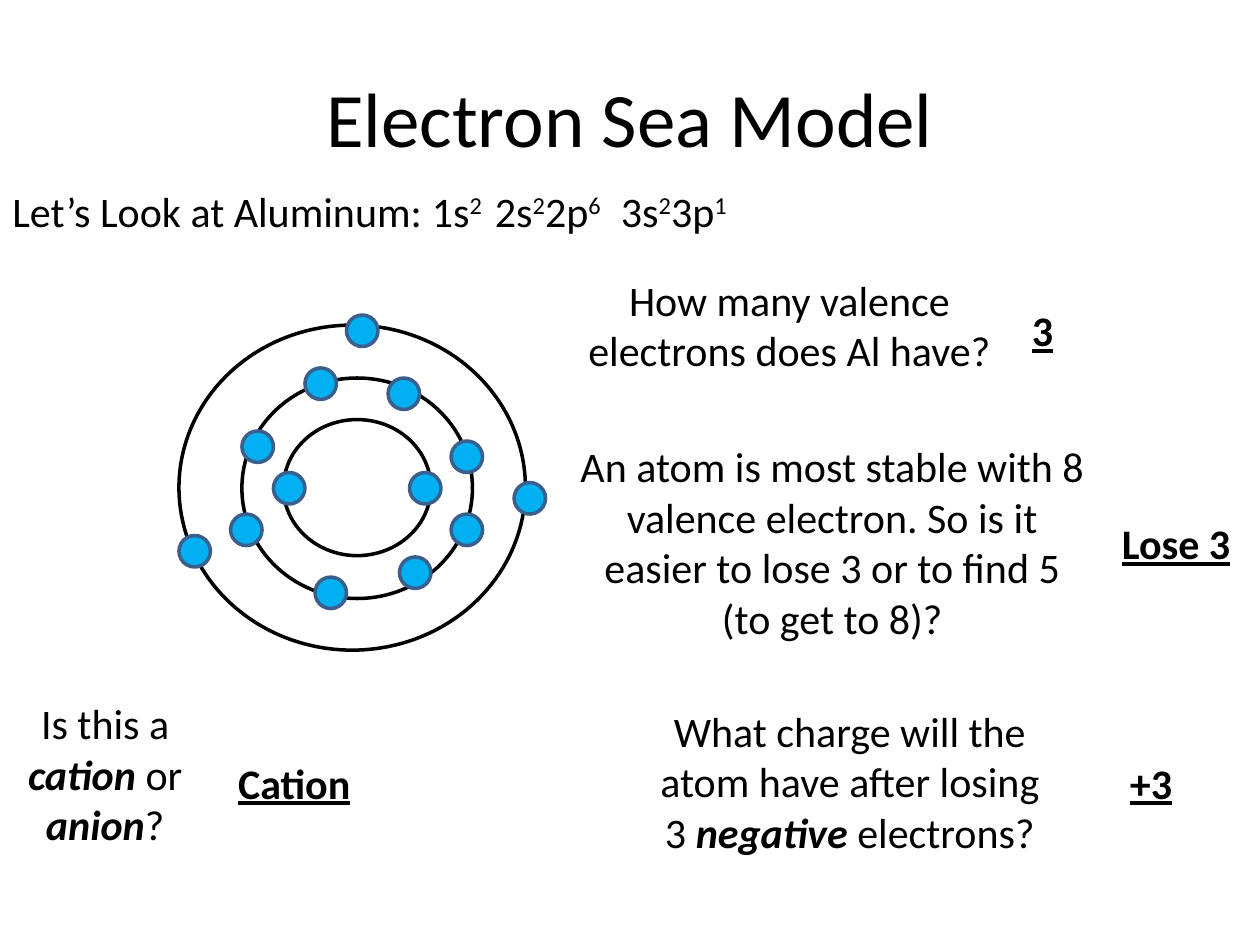
"""Build the Electron Sea Model slide about aluminum's valence electrons."""
from pptx import Presentation
from pptx.dml.color import RGBColor
from pptx.enum.shapes import MSO_SHAPE
from pptx.enum.text import MSO_ANCHOR, MSO_AUTO_SIZE, PP_ALIGN
from pptx.util import Inches, Pt

THEME = {
    "font": "Calibri",
    "text": RGBColor(0, 0, 0),
    "electron": RGBColor(0x00, 0xB0, 0xF0),
    "electron_line": RGBColor(0x3A, 0x5F, 0x8C),
    "title_size": Pt(44),
    "body_size": Pt(24),
    "line_width": Pt(2),
}
STYLES = {
    "plain": {},
    "super": {},
    "strong": {"bold": True, "italic": True},
    "answer": {"bold": True, "underline": True},
}
SUPERSCRIPT = "30000"

TITLE = "Electron Sea Model"
TITLE_BOX = (0.5, 0.3, 9, 1.25)
SHELLS = [(1.92, 3, 1.83, 1.75), (1.42, 2.58, 2.75, 2.58), (2.25, 3.33, 1.17, 1.08)]
ELECTRON_SIZE = 0.25
ELECTRONS = {
    "first shell": [(3.25, 3.75), (2.17, 3.75)],
    "second shell": [(3.08, 3), (3.17, 4.42), (3.58, 4.08), (2.42, 2.92),
                     (1.92, 3.42), (1.83, 4.08), (2.5, 4.58), (3.58, 3.5)],
    "valence shell": [(1.42, 4.25), (2.75, 2.5), (4.08, 3.83)],
}

CONFIGURATION_TOP, LINE_HEIGHT = 1.42, 0.5
CONFIGURATION = [
    (0, 4.33, [("Let’s Look at Aluminum:", "plain")]),
    (3.33, 0.67, [("1s", "plain"), ("2", "super")]),
    (3.83, 1.25, [("2s", "plain"), ("2", "super"), ("2p", "plain"), ("6", "super")]),
    (4.83, 1.25, [("3s", "plain"), ("2", "super"), ("3p", "plain"), ("1", "super")]),
]
QUESTIONS = [
    ((4.39, 2.13, 3.75, 0.91), [("How many valence electrons does Al have?", "plain")]),
    ((4.5, 3.45, 4.21, 1.72),
     [("An atom is most stable with 8 valence electron. So is it easier to lose 3 "
       "or to find 5 (to get to 8)?", "plain")]),
    ((5.08, 5.55, 3.33, 1.31),
     [("What charge will the atom have after losing 3 ", "plain"),
      ("negative ", "strong"), ("electrons?", "plain")]),
    ((0, 5.49, 1.67, 1.31),
     [("Is this a ", "plain"), ("cation", "strong"), (" or ", "plain"),
      ("anion", "strong"), ("?", "plain")]),
]
ANSWER_WIDTH = 1.33
ANSWERS = [(7.61, 2.37, "3"), (8.67, 4.06, "Lose 3"), (8.47, 5.96, "+3"), (1.67, 5.96, "Cation")]


def add_runs(paragraph, runs, size):
    for text, style in runs:
        run = paragraph.add_run()
        run.text = text
        for name, value in {"name": THEME["font"], "size": size, **STYLES[style]}.items():
            setattr(run.font, name, value)
        run.font.color.rgb = THEME["text"]
        if style == "super":
            run._r.get_or_add_rPr().set("baseline", SUPERSCRIPT)


def add_text(slide, box, runs, alignment=PP_ALIGN.CENTER):
    frame = slide.shapes.add_textbox(*map(Inches, box)).text_frame
    frame.word_wrap = True
    frame.auto_size = MSO_AUTO_SIZE.SHAPE_TO_FIT_TEXT
    paragraph = frame.paragraphs[0]
    paragraph.alignment = alignment
    add_runs(paragraph, runs, THEME["body_size"])


def add_ellipse(slide, box, line_color, fill_color=None):
    shape = slide.shapes.add_shape(MSO_SHAPE.OVAL, *map(Inches, box))
    shape.shadow.inherit = False
    if fill_color is None:
        shape.fill.background()
    else:
        shape.fill.solid()
        shape.fill.fore_color.rgb = fill_color
    shape.line.color.rgb = line_color
    shape.line.width = THEME["line_width"]


def add_title(slide):
    title = slide.shapes.title
    for name, value in zip(("left", "top", "width", "height"), TITLE_BOX):
        setattr(title, name, Inches(value))
    title.text_frame.vertical_anchor = MSO_ANCHOR.MIDDLE
    paragraph = title.text_frame.paragraphs[0]
    paragraph.alignment = PP_ALIGN.CENTER
    add_runs(paragraph, [(TITLE, "plain")], THEME["title_size"])


def main():
    presentation = Presentation()
    presentation.slide_width, presentation.slide_height = Inches(10), Inches(7.5)
    slide = presentation.slides.add_slide(presentation.slide_layouts.get_by_name("Title Only"))
    add_title(slide)
    for box in SHELLS:
        add_ellipse(slide, box, THEME["text"])
    for positions in ELECTRONS.values():
        for left, top in positions:
            add_ellipse(slide, (left, top, ELECTRON_SIZE, ELECTRON_SIZE),
                        THEME["electron_line"], THEME["electron"])
    for left, width, runs in CONFIGURATION:
        add_text(slide, (left, CONFIGURATION_TOP, width, LINE_HEIGHT), runs, PP_ALIGN.LEFT)
    for box, runs in QUESTIONS:
        add_text(slide, box, runs)
    for left, top, answer in ANSWERS:
        add_text(slide, (left, top, ANSWER_WIDTH, LINE_HEIGHT), [(answer, "answer")])
    presentation.save("out.pptx")


if __name__ == "__main__":
    main()
